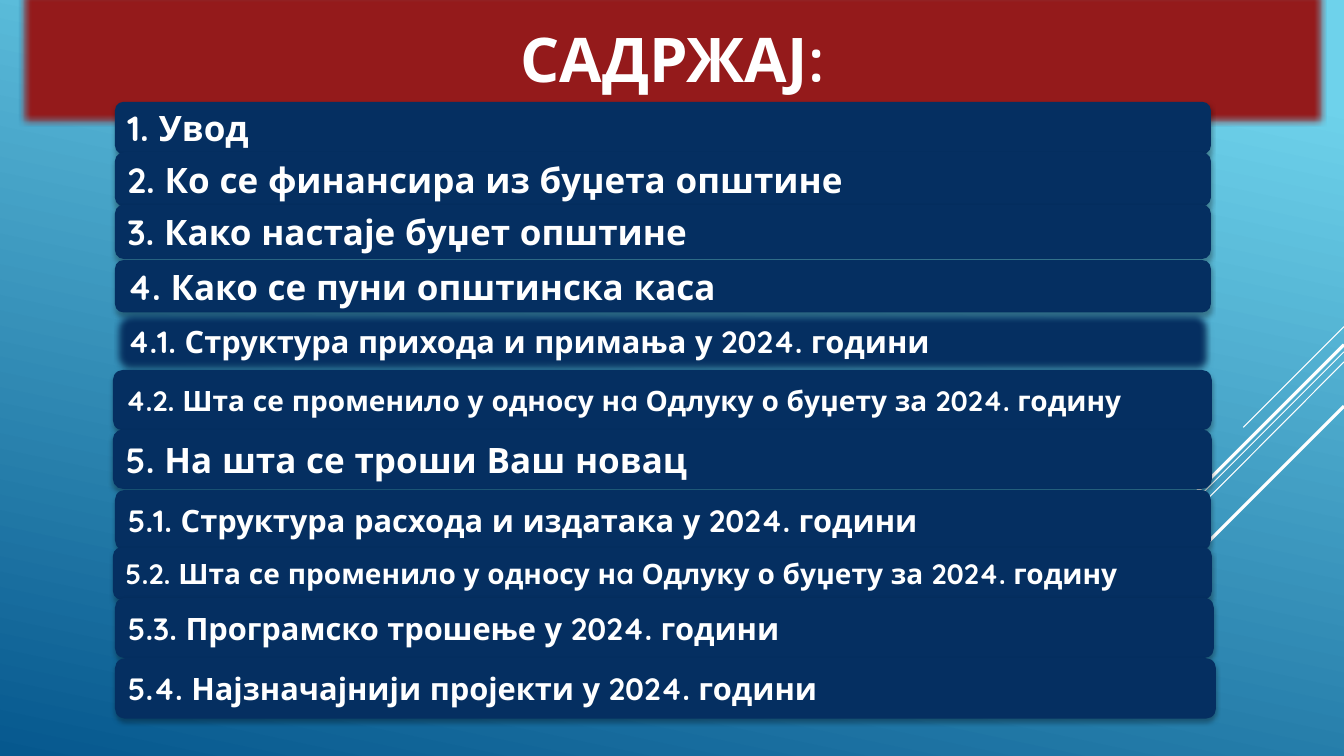
from lxml import etree
from pptx import Presentation
from pptx.dml.color import RGBColor
from pptx.enum.shapes import MSO_CONNECTOR, MSO_SHAPE
from pptx.enum.text import MSO_ANCHOR, MSO_AUTO_SIZE, PP_ALIGN
from pptx.oxml import parse_xml
from pptx.oxml.ns import qn
from pptx.util import Inches, Pt

STRAIGHT = MSO_CONNECTOR.STRAIGHT
ROUNDED = MSO_SHAPE.ROUNDED_RECTANGLE
MIDDLE = MSO_ANCHOR.MIDDLE
LEFT, CENTER = PP_ALIGN.LEFT, PP_ALIGN.CENTER
TITLE_ONLY = 5

FONT = "Quicksand"
COLORS = {
    "sky": "6ED2EB",
    "ocean": "06588E",
    "navy": "052F61",
    "red": "941A1B",
    "white": "FFFFFF",
    "black": "000000",
}
NAMESPACE = "http://schemas.openxmlformats.org/drawingml/2006/main"
SOFT_EDGE = Pt(5)

# start y at the right edge, end x, end y, width in points
RAYS = [
    (3.24, 12.33, 4.24, 0.75),
    (3.49, 10.07, 6.75, 0.75),
    (3.59, 11.26, 5.67, 0.75),
    (3.42, 11.42, 5.33, 2.25),
    (4.03, 11.94, 5.42, 2.25),
]
# text, font size, left, top, width, height, soft edge
CONTENTS = [
    ("1. Увод", 25, 1.14, 1.01, 10.87, 0.52, False),
    ("2. Ко се финансира из буџета општине", 25, 1.14, 1.51, 10.87, 0.54, False),
    ("3. Како настаје буџет општине", 25, 1.14, 2.03, 10.87, 0.54, False),
    ("4. Како се пуни општинска каса", 25, 1.14, 2.58, 10.87, 0.52, False),
    ("4.1. Структура прихода и примања у 2024. години",
     22, 1.14, 3.09, 10.87, 0.6, True),
    ("4.2. Шта се променило у односу нa Одлуку о буџету за 2024. годину",
     20, 1.12, 3.67, 10.9, 0.6, False),
    ("5. На шта се троши Ваш новац", 25, 1.12, 4.26, 10.9, 0.59, False),
    ("5.1. Структура расхода и издатака у 2024. години",
     22, 1.14, 4.86, 10.87, 0.6, False),
    ("5.2. Шта се променило у односу нa Одлуку о буџету за 2024. годину",
     20, 1.12, 5.43, 10.9, 0.52, False),
    ("5.3. Програмско трошење у 2024. години", 22, 1.14, 5.93, 10.9, 0.6, False),
    ("5.4. Најзначајнији пројекти у 2024. години",
     22, 1.14, 6.53, 10.92, 0.6, False),
]


def color(name):
    return RGBColor.from_string(COLORS[name])


def write_text(shape, text, size, align=LEFT):
    frame = shape.text_frame
    frame.word_wrap = True
    frame.auto_size = MSO_AUTO_SIZE.NONE
    frame.vertical_anchor = MIDDLE
    paragraph = frame.paragraphs[0]
    paragraph.alignment = align
    run = paragraph.add_run()
    run.text = text
    run.font.name = FONT
    run.font.size = Pt(size)
    run.font.bold = True
    run.font.color.rgb = color("white")


def set_effects(shape, shadow=False, soft=False):
    """Give the shape only the named effects."""
    shape.shadow.inherit = False
    effects = shape._element.spPr.find(qn("a:effectLst"))
    if shadow:
        effects.append(parse_xml(
            f'<a:outerShdw xmlns:a="{NAMESPACE}" blurRad="{Pt(3.5)}" '
            f'dist="{Pt(2.2)}" dir="5400000" algn="ctr" rotWithShape="0">'
            f'<a:srgbClr val="{COLORS["black"]}"><a:alpha val="32000"/>'
            '</a:srgbClr></a:outerShdw>'))
    if soft:
        etree.SubElement(effects, qn("a:softEdge"), rad=str(SOFT_EDGE))


def paint_background(slide):
    fill = slide.background.fill
    fill.gradient()
    fill.gradient_angle = 258
    for stop, name, position in zip(
            fill.gradient_stops, ("sky", "ocean"), (0.1, 1)):
        stop.color.rgb = color(name)
        stop.position = position


def add_ray(slide, start_y, end_x, end_y, width):
    ray = slide.shapes.add_connector(
        STRAIGHT, Inches(13.33), Inches(start_y), Inches(end_x), Inches(end_y))
    ray.line.color.rgb = color("white")
    ray.line.width = Pt(width)
    etree.SubElement(ray._element.spPr, qn("a:effectLst"))


def format_title(slide, text):
    """Turn the title placeholder into a red scroll banner."""
    title = slide.shapes.title
    title.left, title.top = Inches(0.19), Inches(-0.11)
    title.width, title.height = Inches(12.96), Inches(1.36)
    title._element.spPr.insert(1, parse_xml(
        f'<a:prstGeom xmlns:a="{NAMESPACE}" prst="horizontalScroll">'
        '<a:avLst/></a:prstGeom>'))
    title.fill.solid()
    title.fill.fore_color.rgb = color("red")
    title.line.color.rgb = color("navy")
    title.line.width = Pt(1.25)
    set_effects(title, soft=True)
    write_text(title, text, size=44, align=CENTER)


def add_entry(slide, text, size, left, top, width, height, soft):
    bar = slide.shapes.add_shape(
        ROUNDED, Inches(left), Inches(top), Inches(width), Inches(height))
    bar.fill.solid()
    bar.fill.fore_color.rgb = color("navy")
    bar.line.fill.background()
    set_effects(bar, shadow=True, soft=soft)
    write_text(bar, text, size=size)


def main():
    presentation = Presentation()
    presentation.slide_width = Inches(13.33)
    presentation.slide_height = Inches(7.5)
    slide = presentation.slides.add_slide(presentation.slide_layouts[TITLE_ONLY])
    paint_background(slide)
    format_title(slide, "САДРЖАЈ:")
    for ray in RAYS:
        add_ray(slide, *ray)
    for entry in CONTENTS:
        add_entry(slide, *entry)
    presentation.save("out.pptx")


if __name__ == "__main__":
    main()
